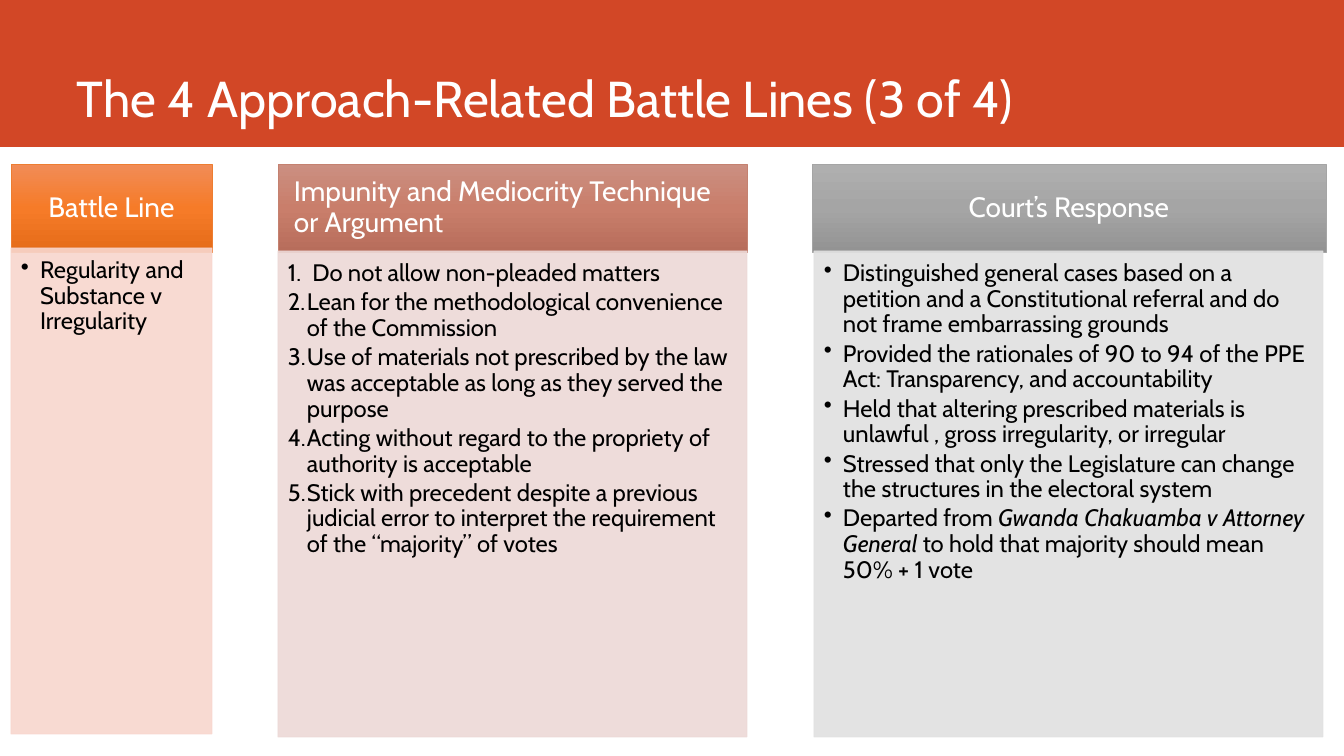
from copy import deepcopy

from lxml.etree import SubElement
from pptx import Presentation
from pptx.dml.color import RGBColor
from pptx.enum.shapes import MSO_SHAPE as Shape
from pptx.enum.text import MSO_ANCHOR as Anchor, PP_ALIGN as Align
from pptx.oxml.ns import qn
from pptx.util import Pt

RED = RGBColor(0xD2, 0x47, 0x26)
WHITE = RGBColor(0xFF, 0xFF, 0xFF)
BLACK = RGBColor(0, 0, 0)
ORANGES = [RGBColor(0xF1, 0x8C, 0x57), RGBColor(0xF6, 0x7B, 0x28), RGBColor(0xE5, 0x6C, 0x19)]
ROSES = [RGBColor(0xCB, 0x8F, 0x81), RGBColor(0xC9, 0x7E, 0x6B), RGBColor(0xB7, 0x6D, 0x5B)]
GRAYS = [RGBColor(0xAF, 0xAF, 0xAF), RGBColor(0xA5, 0xA5, 0xA5), RGBColor(0x93, 0x93, 0x93)]
ORANGE_LINE = RGBColor(0xED, 0x7D, 0x31)
ROSE_LINE = RGBColor(0xC4, 0x81, 0x70)
GRAY_LINE = RGBColor(0xA5, 0xA5, 0xA5)
PALE_ORANGE = RGBColor(0xF8, 0xD7, 0xCE)
PALE_ROSE = RGBColor(0xED, 0xD9, 0xD7)
PALE_GRAY = RGBColor(0xE1, 0xE1, 0xE1)

FONT = "Cabin"
TITLE = "The 4 Approach-Related Battle Lines (3 of 4)"

# A paragraph is a list of runs; every second run is italic.
COLUMNS = [
    dict(head="Battle Line", align=Align.CENTER, numbered=False,
         head_x=(11, 201), body_x=(11, 201), body_top=248,
         gradient=ORANGES, line=ORANGE_LINE, pale=PALE_ORANGE,
         items=[["Regularity and Substance v Irregularity"]]),
    dict(head="Impunity and Mediocrity Technique or Argument", align=Align.LEFT, numbered=True,
         head_x=(278, 469), body_x=(278, 469), body_top=251,
         gradient=ROSES, line=ROSE_LINE, pale=PALE_ROSE,
         items=[
             [" Do not allow non-pleaded matters"],
             ["Lean for the methodological convenience of the Commission"],
             ["Use of materials not prescribed by the law was acceptable as long as "
              "they served the purpose"],
             ["Acting without regard to the propriety of authority is acceptable"],
             ["Stick with precedent despite a previous judicial error to interpret "
              "the requirement of the “majority” of votes"],
         ]),
    dict(head="Court’s Response", align=Align.CENTER, numbered=False,
         head_x=(812, 514), body_x=(814, 509), body_top=251,
         gradient=GRAYS, line=GRAY_LINE, pale=PALE_GRAY,
         items=[
             ["Distinguished general cases based on a petition and a Constitutional "
              "referral and do not frame embarrassing grounds"],
             ["Provided the rationales of 90 to 94 of the PPE Act: Transparency, "
              "and accountability"],
             ["Held that altering prescribed materials is unlawful , gross "
              "irregularity, or irregular"],
             ["Stressed that only the Legislature can change the structures in the "
              "electoral system"],
             ["Departed from ", "Gwanda Chakuamba v Attorney General",
              " to hold that majority should mean 50% + 1 vote"],
         ]),
]

SLIDE_W, SLIDE_H = 1344, 756
BAND_H = 147
HEAD_TOP, HEAD_H, BODY_H = 164, 88, 486
INDENT = 19
PX = 12192000 / SLIDE_W


def px(n):
    return round(n * PX)


def add_rect(slide, x, y, w, h):
    s = slide.shapes.add_shape(Shape.RECTANGLE, px(x), px(y), px(w), px(h))
    s.shadow.inherit = False
    return s


def fill_gradient(s, colors):
    """Fill from top to bottom with evenly spaced colours."""
    s.fill.gradient()
    s.fill.gradient_angle = 270
    stops = s.fill.gradient_stops
    gs_list = s._element.spPr.find(".//" + qn("a:gsLst"))
    while len(gs_list) < len(colors):
        gs_list.append(deepcopy(gs_list[0]))
    stops = s.fill.gradient_stops
    for i, (stop, color) in enumerate(zip(stops, colors)):
        stop.color.rgb = color
        stop.position = i / (len(colors) - 1)


def set_alpha(s, percent):
    for color in s._element.spPr.iter(qn("a:srgbClr")):
        SubElement(color, qn("a:alpha"), val=str(percent * 1000))


def add_bullet(p, numbered):
    pPr = p._p.get_or_add_pPr()
    pPr.set("marL", str(px(INDENT)))
    pPr.set("indent", str(-px(INDENT)))
    if numbered:
        SubElement(pPr, qn("a:buFont"), typeface="+mj-lt")
        SubElement(pPr, qn("a:buAutoNum"), type="arabicPeriod")
    else:
        SubElement(pPr, qn("a:buChar"), char="•")


def write(s, paragraphs, size, color, insets, anchor=Anchor.TOP, align=Align.LEFT,
          spacing=0.9, after=0, bullets=False, numbered=False):
    tf = s.text_frame
    tf.word_wrap = True
    tf.vertical_anchor = anchor
    tf.margin_left, tf.margin_top, tf.margin_right, tf.margin_bottom = map(px, insets)
    for i, runs in enumerate(paragraphs):
        p = tf.add_paragraph() if i else tf.paragraphs[0]
        p.alignment = align
        p.line_spacing = spacing
        p.space_after = Pt(after)
        if bullets:
            add_bullet(p, numbered)
        for j, text in enumerate(runs):
            r = p.add_run()
            r.text = text
            r.font.name = FONT
            r.font.size = Pt(size)
            r.font.color.rgb = color
            r.font.italic = j % 2 == 1


def add_column(slide, col):
    x, w = col["head_x"]
    head = add_rect(slide, x, HEAD_TOP, w, HEAD_H)
    fill_gradient(head, col["gradient"])
    head.line.color.rgb = col["line"]
    head.line.width = Pt(0.5)
    write(head, [[col["head"]]], 20, WHITE, (16, 9, 16, 9),
          anchor=Anchor.MIDDLE, align=col["align"])

    x, w = col["body_x"]
    body = add_rect(slide, x, col["body_top"], w, BODY_H)
    body.fill.solid()
    body.fill.fore_color.rgb = body.line.color.rgb = col["pale"]
    body.line.width = Pt(0.5)
    set_alpha(body, 90)
    write(body, col["items"], 17, BLACK, (10, 10, 13, 15),
          after=2.5, bullets=True, numbered=col["numbered"])


def main():
    prs = Presentation()
    prs.slide_width, prs.slide_height = px(SLIDE_W), px(SLIDE_H)
    slide = prs.slides.add_slide(prs.slide_layouts[6])

    band = add_rect(slide, 0, 0, SLIDE_W, BAND_H)
    band.fill.solid()
    band.fill.fore_color.rgb = RED
    band.line.fill.background()

    title = slide.shapes.add_textbox(px(67), px(10), px(1185), px(123))
    write(title, [[TITLE]], 36, WHITE, (10, 5, 10, 5), anchor=Anchor.BOTTOM)

    for col in COLUMNS:
        add_column(slide, col)
    prs.save("out.pptx")


if __name__ == "__main__":
    main()
